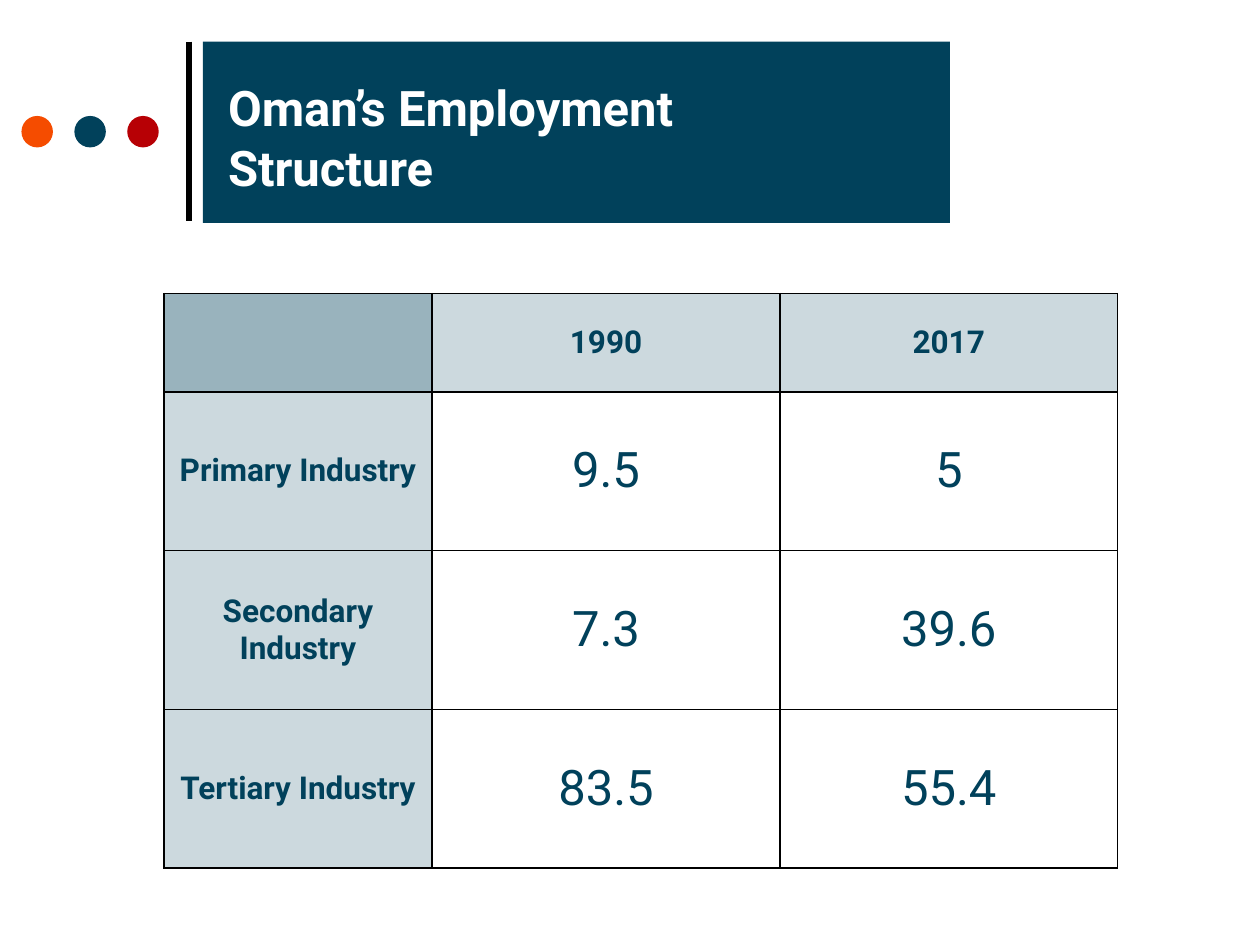
from dataclasses import dataclass

from lxml.etree import SubElement
from pptx import Presentation
from pptx.dml.color import RGBColor as Color
from pptx.enum.shapes import MSO_CONNECTOR as Connector
from pptx.enum.shapes import MSO_SHAPE as Shape
from pptx.enum.text import MSO_ANCHOR as Anchor
from pptx.enum.text import MSO_AUTO_SIZE as AutoSize
from pptx.enum.text import PP_ALIGN as Align
from pptx.oxml.ns import qn
from pptx.util import Inches, Pt


@dataclass(frozen=True)
class Theme:
    font: str = "Roboto"
    navy: str = "01415B"
    orange: str = "F54C00"
    red: str = "B70005"
    black: str = "000000"
    white: str = "FFFFFF"
    corner: str = "99B3BD"
    header: str = "CCD9DE"
    large: int = 28
    label: int = 18


THEME = Theme()
TITLE = ["Oman’s Employment", "Structure"]
COLUMN_WIDTHS = [2.13, 2.76, 2.68]
ROW_HEIGHTS = [0.78, 1.26, 1.26, 1.26]
EMPLOYMENT = [
    ["", "1990", "2017"],
    ["Primary Industry", "9.5", "5"],
    ["Secondary Industry", "7.3", "39.6"],
    ["Tertiary Industry", "83.5", "55.4"],
]


def paint(target, color):
    target.fill.solid()
    target.fill.fore_color.rgb = Color.from_string(color)


def write(frame, lines, size=THEME.large, color=THEME.navy, bold=False,
          align=Align.CENTER, spacing=None):
    """Write lines as one paragraph, parted by line breaks."""
    para = frame.paragraphs[0]
    para.alignment = align
    para.line_spacing = spacing
    for index, line in enumerate(lines):
        if index:
            para.add_line_break()
        span = para.add_run()
        span.text = line
        span.font.name = THEME.font
        span.font.size = Pt(size)
        span.font.bold = bold
        span.font.color.rgb = Color.from_string(color)


def add_rule(page, x, top, bottom):
    rule = page.shapes.add_connector(
        Connector.STRAIGHT, Inches(x), Inches(top), Inches(x), Inches(bottom))
    rule.line.color.rgb = Color.from_string(THEME.black)
    rule.line.width = Pt(3)
    SubElement(rule._element.spPr, qn("a:effectLst"))


def add_dots(page, left, top, size, step):
    for index, color in enumerate([THEME.orange, THEME.navy, THEME.red]):
        dot = page.shapes.add_shape(
            Shape.OVAL, Inches(left + index * step), Inches(top),
            Inches(size), Inches(size))
        paint(dot, color)
        dot.line.fill.background()
        dot.shadow.inherit = False


def format_title(page):
    title = page.shapes.title
    title.left, title.top = Inches(1.61), Inches(0.33)
    title.width, title.height = Inches(5.93), Inches(1.44)
    paint(title, THEME.navy)
    frame = title.text_frame
    frame.auto_size = AutoSize.NONE
    frame.word_wrap = True
    frame.vertical_anchor = Anchor.MIDDLE
    frame.margin_left = Inches(0.2)
    frame.margin_top = Inches(0.12)
    write(frame, TITLE, color=THEME.white, bold=True, align=Align.LEFT,
          spacing=Pt(34))


def add_borders(cell):
    """Draw all four sides; borders must come before the fill."""
    properties = cell._tc.get_or_add_tcPr()
    for side in ("lnL", "lnR", "lnT", "lnB"):
        border = SubElement(properties, qn(f"a:{side}"), w=str(Pt(1)))
        fill = SubElement(border, qn("a:solidFill"))
        SubElement(fill, qn("a:srgbClr"), val=THEME.black)


def add_employment_table(page, left, top):
    frame = page.shapes.add_table(
        len(ROW_HEIGHTS), len(COLUMN_WIDTHS), Inches(left), Inches(top),
        Inches(sum(COLUMN_WIDTHS)), Inches(sum(ROW_HEIGHTS)))
    table = frame.table
    table.first_row = table.horz_banding = False
    for column, width in zip(table.columns, COLUMN_WIDTHS):
        column.width = Inches(width)
    for row, height in zip(table.rows, ROW_HEIGHTS):
        row.height = Inches(height)

    for row, values in enumerate(EMPLOYMENT):
        for column, value in enumerate(values):
            cell = table.cell(row, column)
            cell.vertical_anchor = Anchor.MIDDLE
            add_borders(cell)
            is_label = row == 0 or column == 0
            if not value:
                paint(cell, THEME.corner)
                continue
            if is_label:
                paint(cell, THEME.header)
            else:
                cell.fill.background()
            write(cell.text_frame, [value], bold=is_label,
                  size=THEME.label if is_label else THEME.large)


def main():
    deck = Presentation()
    deck.slide_width, deck.slide_height = Inches(10), Inches(7.5)
    page = deck.slides.add_slide(deck.slide_layouts[5])
    # Heading with its ornaments
    add_rule(page, 1.5, 0.33, 1.75)
    add_dots(page, 0.17, 0.92, size=0.25, step=0.42)
    format_title(page)
    # Share of employment by sector
    add_employment_table(page, 1.3, 2.33)
    deck.save("out.pptx")


if __name__ == "__main__":
    main()
